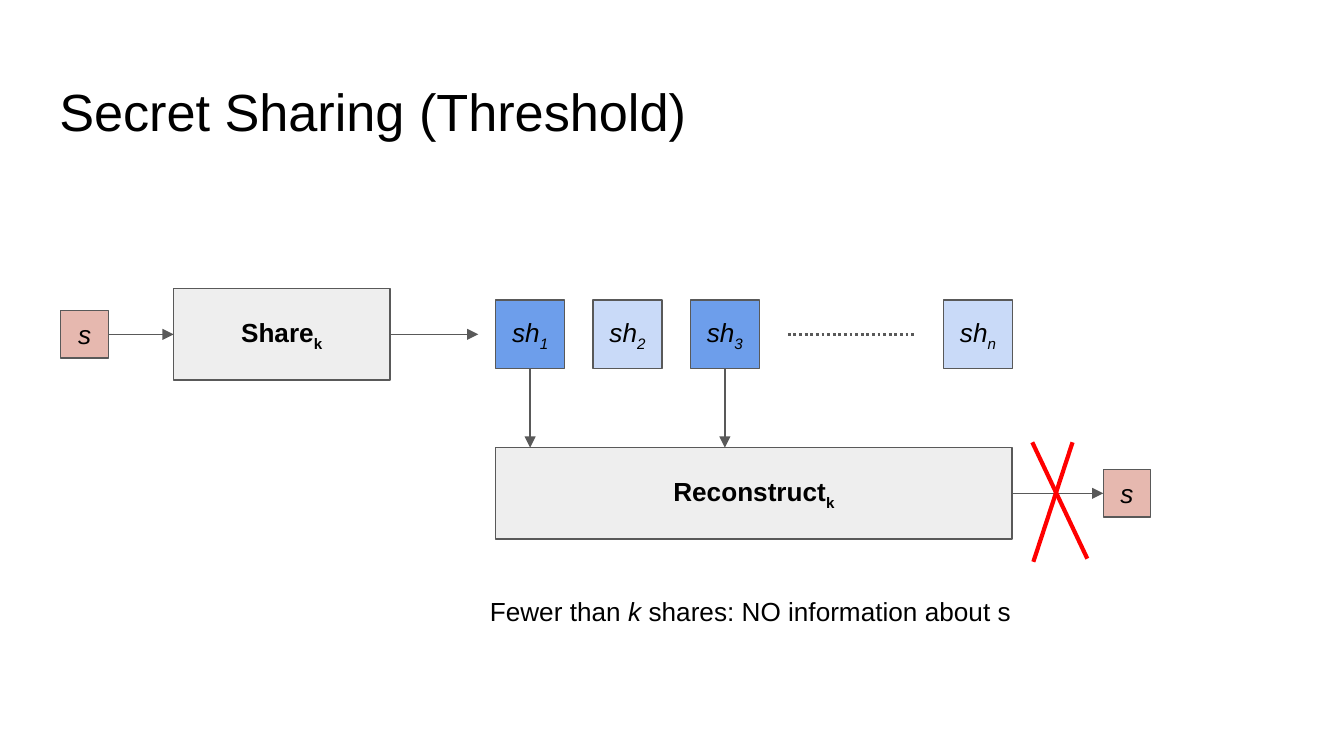
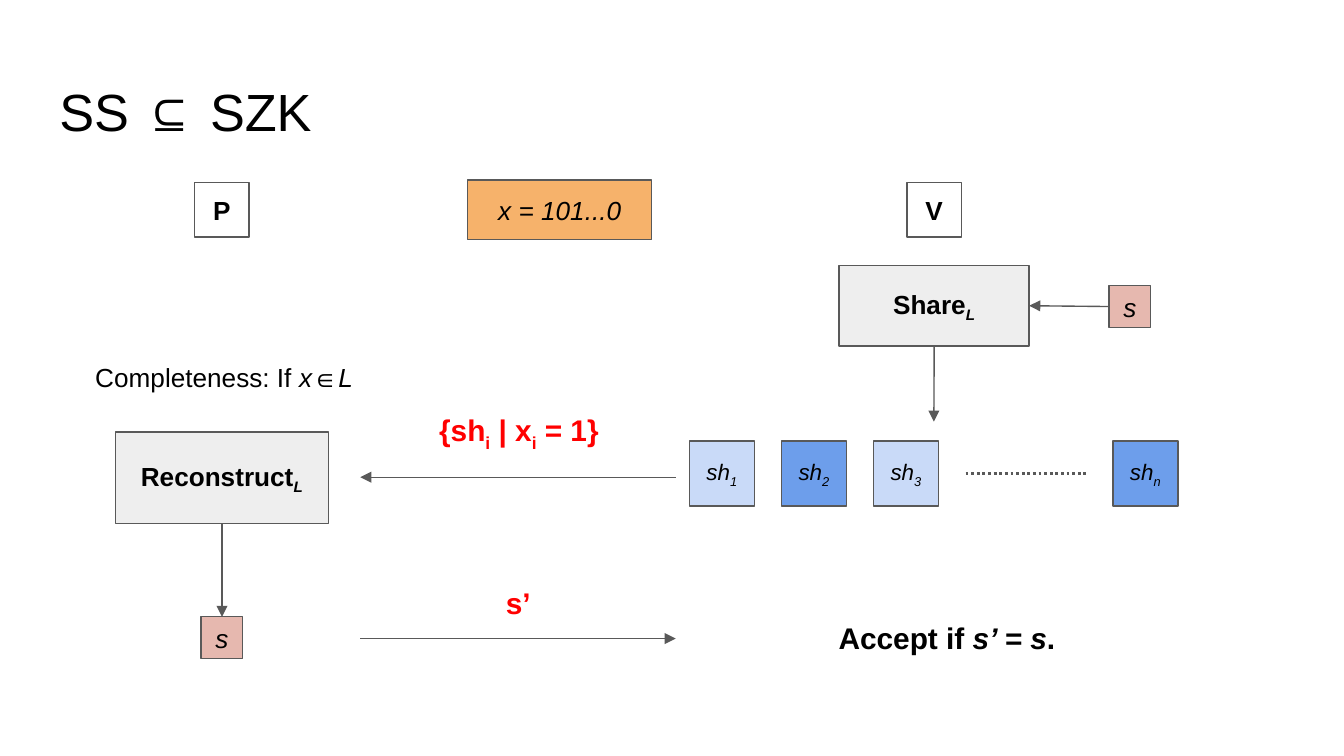
from lxml import etree
from pptx import Presentation
from pptx.dml.color import RGBColor
from pptx.enum.dml import MSO_LINE_DASH_STYLE as Dash
from pptx.enum.shapes import MSO_CONNECTOR, MSO_SHAPE
from pptx.enum.text import MSO_ANCHOR as Anchor, MSO_AUTO_SIZE as AutoSize, PP_ALIGN as Align
from pptx.oxml.ns import qn
from pptx.util import Cm, Pt

COLORS = {
    "text": "000000",
    "line": "595959",
    "algorithm": "EEEEEE",
    "secret": "E6B8AF",
    "share": "C9DAF8",
    "chosen share": "6D9EEB",
    "input": "F6B26B",
    "alert": "FF0000",
}
FONT = "Arial"
INSET = Cm(0.25)
TOP, LEFT, BOTTOM, RIGHT = range(4)


def color(name):
    return RGBColor.from_string(COLORS[name])


def write(shape, runs, size=14, bold=False, ink="text", align=Align.CENTER, anchor=Anchor.MIDDLE):
    """Write (text, style) runs; in a style, i is italic and _ is subscript."""
    frame = shape.text_frame
    frame.word_wrap = True
    frame.auto_size = AutoSize.NONE
    frame.vertical_anchor = anchor
    frame.margin_left = frame.margin_right = INSET
    frame.margin_top = frame.margin_bottom = INSET
    paragraph = frame.paragraphs[0]
    paragraph.alignment = align
    paragraph.font.name = FONT
    paragraph.font.size = Pt(size)
    paragraph.font.bold = bold
    paragraph.font.color.rgb = color(ink)
    for text, style in runs:
        run = paragraph.add_run()
        run.text = text
        if "i" in style:
            run.font.italic = True
        if "_" in style:
            run._r.get_or_add_rPr().set("baseline", "-25000")


def add_box(slide, left, top, width, height, runs, fill=None, **text_format):
    shape = slide.shapes.add_shape(MSO_SHAPE.RECTANGLE, Cm(left), Cm(top), Cm(width), Cm(height))
    shape.shadow.inherit = False
    if fill:
        shape.fill.solid()
        shape.fill.fore_color.rgb = color(fill)
    else:
        shape.fill.background()
    shape.line.color.rgb = color("line")
    shape.line.width = Pt(0.75)
    write(shape, runs, **text_format)
    return shape


def add_label(slide, left, top, width, height, runs, align=Align.LEFT, **text_format):
    label = slide.shapes.add_textbox(Cm(left), Cm(top), Cm(width), Cm(height))
    write(label, runs, align=align, anchor=Anchor.TOP, **text_format)


def add_line(slide, start, end, ink="line", width=0.75, dash=None, arrow=False):
    """Draw a line; each end is an (x, y) point or a (shape, side) joint."""
    points = [(Cm(0), Cm(0)) if hasattr(first, "shape_id") else (Cm(first), Cm(second))
              for first, second in (start, end)]
    line = slide.shapes.add_connector(MSO_CONNECTOR.STRAIGHT, *points[0], *points[1])
    for joint, connect in ((start, line.begin_connect), (end, line.end_connect)):
        if hasattr(joint[0], "shape_id"):
            connect(*joint)
    line.line.color.rgb = color(ink)
    line.line.width = Pt(width)
    if dash:
        line.line.dash_style = dash
    if arrow:
        etree.SubElement(line.line._get_or_add_ln(), qn("a:tailEnd"), type="triangle")
    etree.SubElement(line._element.spPr, qn("a:effectLst"))


def add_arrow(slide, start, end):
    add_line(slide, start, end, arrow=True)


def add_algorithm(slide, left, top, width, height, name, subscript, style="_"):
    return add_box(slide, left, top, width, height, [(name, ""), (subscript, style)],
                   "algorithm", bold=True)


def add_secret(slide, left, top, side):
    return add_box(slide, left, top, side, side, [("s", "i")], "secret")


def add_share_row(slide, left, top, pitch, chosen, size):
    """Place shares 1, 2, 3, a dotted gap and share n."""
    side = pitch * 0.706
    shares = {}
    for index, steps in (("1", 0), ("2", 1), ("3", 2), ("n", 4.6)):
        fill = "chosen share" if index in chosen else "share"
        shares[index] = add_box(slide, left + steps * pitch, top, side, side,
                                [("sh", "i"), (index, "i_")], fill, size=size)
    middle = top + side / 2
    add_line(slide, (left + 3 * pitch, middle), (left + 4.31 * pitch, middle),
             width=1.5, dash=Dash.ROUND_DOT)
    return shares


def add_titled_slide(presentation, text):
    slide = presentation.slides.add_slide(presentation.slide_layouts[5])
    title = slide.shapes.title
    title.left, title.top, title.width, title.height = Cm(0.87), Cm(1.24), Cm(23.67), Cm(1.59)
    write(title, [(text, "")], size=28, align=Align.LEFT, anchor=Anchor.TOP)
    return slide


def add_cross(slide, left, top):
    for start, end in (((0, 0), (1.04, 2.2)), ((0.76, 0), (0.02, 2.26))):
        add_line(slide, (left + start[0], top + start[1]), (left + end[0], top + end[1]),
                 ink="alert", width=2.25)


def add_sharing(slide, left, middle):
    """Secret, sharing algorithm and the shares, on one axis."""
    secret = add_secret(slide, left, middle - 0.45, 0.9)
    algorithm = add_algorithm(slide, left + 2.13, middle - 0.865, 4.09, 1.73, "Share", "k")
    add_arrow(slide, (secret, RIGHT), (algorithm, LEFT))
    add_arrow(slide, (algorithm, RIGHT), (left + 7.89, middle))
    return add_share_row(slide, left + 8.22, middle - 0.65, 1.84, "13", 14)


def add_failed_reconstruction(slide, left, top, shares):
    """Reconstruction from too few shares, with its crossed-out result."""
    algorithm = add_algorithm(slide, left, top, 9.76, 1.73, "Reconstruct", "k")
    for share in shares:
        center = (share.left + share.width / 2) / Cm(1)
        add_arrow(slide, (share, BOTTOM), (center, top))
    secret = add_secret(slide, left + 11.48, top + 0.415, 0.9)
    add_arrow(slide, (algorithm, RIGHT), (secret, LEFT))
    add_cross(slide, left + 10.14, top - 0.1)
    add_label(slide, left - 0.43, top + 2.54, 10.49, 2.21,
              [("Fewer than ", ""), ("k", "i"), (" shares: NO information about s", "")],
              align=Align.CENTER)


def add_parties(slide, left, top):
    """Prover, common input and verifier."""
    for offset, name in ((0, "P"), (13.46, "V")):
        add_box(slide, left + offset, top, 1.03, 1.03, [(name, "")], bold=True)
    add_box(slide, left + 5.16, top - 0.05, 3.48, 1.13, [("x = 101...0", "i")], "input")


def add_verifier(slide, left, top):
    algorithm = add_algorithm(slide, left + 2.83, top, 3.59, 1.52, "Share", "L", "i_")
    secret = add_secret(slide, left + 7.93, top + 0.38, 0.79)
    add_arrow(slide, (secret, LEFT), (algorithm, RIGHT))
    add_arrow(slide, (algorithm, BOTTOM), (left + 4.62, top + 2.95))
    add_share_row(slide, left, top + 3.32, 1.74, "2n", 12)
    add_label(slide, left + 2.57, top + 6.44, 5.77, 1.22,
              [("Accept if ", ""), ("s’ = s", "i"), (".", "")], size=16, bold=True)


def add_prover(slide, left, top):
    add_label(slide, left - 0.63, top - 1.59, 5.59, 1.22,
              [("Completeness: If ", ""), ("x", "i"), ("∈", ""), ("L", "i")])
    algorithm = add_algorithm(slide, left, top, 4.03, 1.73, "Reconstruct", "L", "i_")
    secret = add_secret(slide, left + 1.62, top + 3.49, 0.79)
    add_arrow(slide, (algorithm, BOTTOM), (secret, TOP))


def add_messages(slide, left, top):
    """Chosen shares go to the prover, the answer comes back."""
    right, answer_top = left + 5.96, top + 3.05
    add_arrow(slide, (right, top), (left, top))
    add_label(slide, left + 1.24, top - 1.48, 4.85, 1.22,
              [("{sh", ""), ("i", "_"), (" | x", ""), ("i", "_"), (" = 1}", "")],
              size=16, bold=True, ink="alert")
    add_arrow(slide, (left, answer_top), (right, answer_top))
    add_label(slide, left + 2.5, answer_top - 1.27, 1.65, 1.22, [("s’", "")],
              size=16, bold=True, ink="alert")


def build_threshold_slide(presentation):
    slide = add_titled_slide(presentation, "Secret Sharing (Threshold)")
    shares = add_sharing(slide, 1.15, 6.32)
    add_failed_reconstruction(slide, 9.37, 8.46, [shares["1"], shares["3"]])


def build_protocol_slide(presentation):
    slide = add_titled_slide(presentation, "SS ⊆ SZK")
    add_parties(slide, 3.68, 3.45)
    add_verifier(slide, 13.03, 5.02)
    add_prover(slide, 2.18, 8.17)
    add_messages(slide, 6.81, 9.02)


def main():
    presentation = Presentation()
    presentation.slide_width, presentation.slide_height = Cm(25.4), Cm(14.29)
    build_threshold_slide(presentation)
    build_protocol_slide(presentation)
    presentation.save("out.pptx")


if __name__ == "__main__":
    main()
